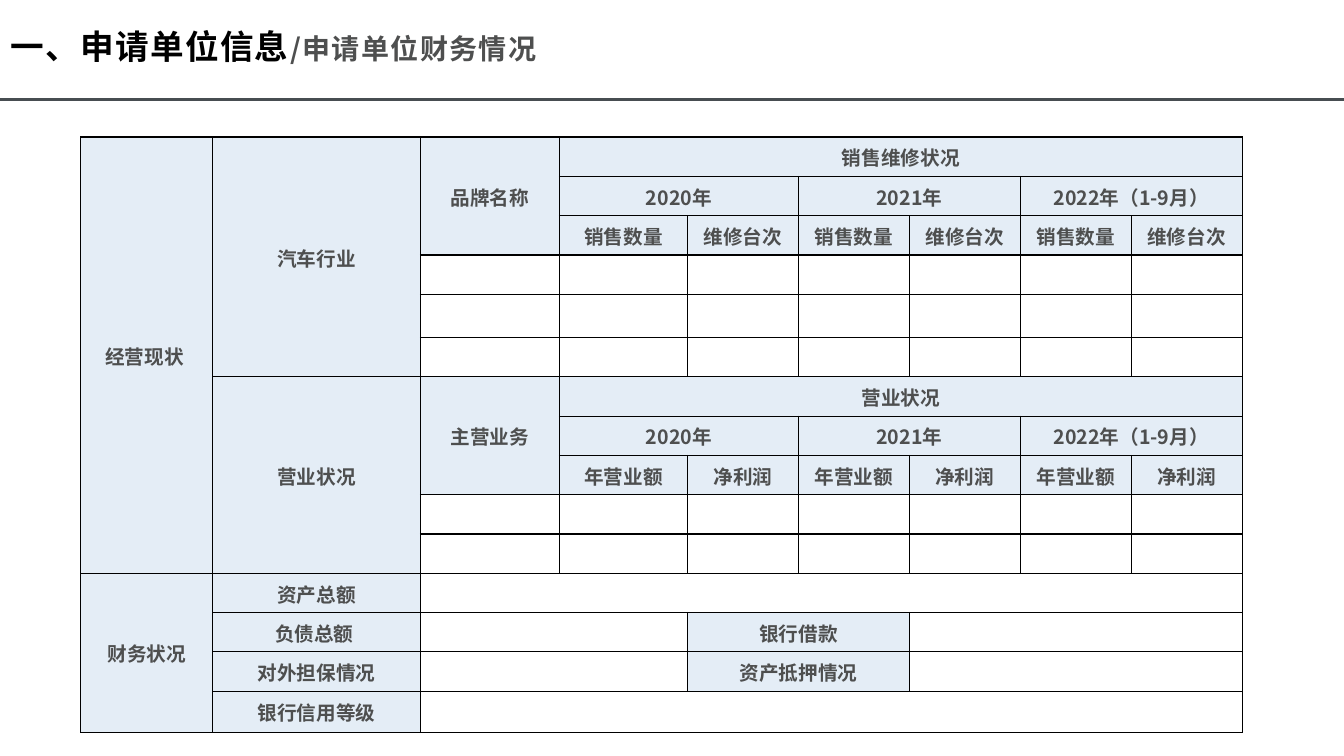
from dataclasses import dataclass

from lxml import etree
from pptx import Presentation
from pptx.dml.color import RGBColor
from pptx.enum.shapes import MSO_CONNECTOR
from pptx.enum.text import MSO_ANCHOR, MSO_AUTO_SIZE, PP_ALIGN
from pptx.oxml.ns import qn
from pptx.slide import Slide
from pptx.table import Table, _Cell
from pptx.text.text import _Paragraph
from pptx.util import Inches, Pt

STRAIGHT = MSO_CONNECTOR.STRAIGHT
MIDDLE = MSO_ANCHOR.MIDDLE
NO_AUTOFIT = MSO_AUTO_SIZE.NONE
LEFT = PP_ALIGN.LEFT
CENTER = PP_ALIGN.CENTER

WHITE = RGBColor(0xFF, 0xFF, 0xFF)
BLACK = RGBColor(0x00, 0x00, 0x00)
GREY = RGBColor(0x4E, 0x4F, 0x4F)
RULE_GREY = RGBColor(0x47, 0x4D, 0x51)
PALE_BLUE = RGBColor(0xE4, 0xED, 0xF6)

FONT = "Noto Sans CJK SC"
COLUMN_WIDTHS = [1.31, 2.06, 1.38, 1.27] + [1.1] * 5
ROW_HEIGHTS = [0.39] * 4 + [0.43] + [0.39] * 9 + [0.41]
YEARS = ["2020年", "2021年", "2022年（1-9月）"]


@dataclass(frozen=True)
class Block:
    row: int
    column: int
    text: str = ""
    rows: int = 1
    columns: int = 1


@dataclass(frozen=True)
class Section:
    row: int
    rows: int
    name: str
    item: str
    heading: str
    measures: tuple[str, str]


SECTIONS = [
    Section(0, 6, "汽车行业", "品牌名称", "销售维修状况", ("销售数量", "维修台次")),
    Section(6, 5, "营业状况", "主营业务", "营业状况", ("年营业额", "净利润")),
]

FINANCE_BLOCKS = [
    Block(0, 0, "经营现状 ", rows=11),
    Block(11, 0, "财务状况", rows=4),
    Block(11, 1, "资产总额"),
    Block(11, 2, columns=7),
    Block(12, 1, "负债总额 "),
    Block(12, 2, columns=2),
    Block(12, 4, "银行借款", columns=2),
    Block(12, 6, columns=3),
    Block(13, 1, "对外担保情况"),
    Block(13, 2, columns=2),
    Block(13, 4, "资产抵押情况", columns=2),
    Block(13, 6, columns=3),
    Block(14, 1, "银行信用等级"),
    Block(14, 2, columns=7),
]


def section_blocks(section: Section) -> list[Block]:
    top = section.row
    blocks = [
        Block(top, 1, section.name, rows=section.rows),
        Block(top, 2, section.item, rows=3),
        Block(top, 3, section.heading, columns=6),
    ]
    for index, year in enumerate(YEARS):
        column = 3 + 2 * index
        blocks.append(Block(top + 1, column, year, columns=2))
        for offset, measure in enumerate(section.measures):
            blocks.append(Block(top + 2, column + offset, measure))
    return blocks


def add_span(para: _Paragraph, text: str, size: float, color: RGBColor, spacing: int = 0) -> None:
    span = para.add_run()
    span.text = text
    span.font.size = Pt(size)
    span.font.bold = True
    span.font.name = FONT
    span.font.color.rgb = color
    properties = span.font._element
    etree.SubElement(properties, qn("a:ea")).set("typeface", FONT)
    if spacing:
        properties.set("spc", str(spacing))


def add_title(page: Slide) -> None:
    title = page.shapes.title
    title.left, title.top = Inches(0), Inches(0.21)
    title.width, title.height = Inches(9.64), Inches(0.55)
    frame = title.text_frame
    frame.auto_size = NO_AUTOFIT
    frame.vertical_anchor = MIDDLE
    para = frame.paragraphs[0]
    para.alignment = LEFT
    para.line_spacing = 0.9
    add_span(para, "一、申请单位信息", 24, BLACK, 100)
    add_span(para, "/申请单位财务情况", 20, GREY, 100)


def add_rule(page: Slide) -> None:
    rule = page.shapes.add_connector(STRAIGHT, Inches(0), Inches(0.99), Inches(13.33), Inches(0.99))
    rule.line.color.rgb = RULE_GREY
    rule.line.width = Pt(1.9)
    etree.SubElement(rule._element.spPr, qn("a:effectLst"))


def format_cell(cell: _Cell) -> None:
    properties = cell._tc.get_or_add_tcPr()
    for side in ("a:lnL", "a:lnR", "a:lnT", "a:lnB"):
        border = etree.SubElement(properties, qn(side), w=str(Pt(1)))
        fill = etree.SubElement(border, qn("a:solidFill"))
        etree.SubElement(fill, qn("a:srgbClr"), val=str(BLACK))
    cell.margin_left = cell.margin_right = cell.margin_top = Inches(0.01)
    cell.margin_bottom = Inches(0)
    cell.vertical_anchor = MIDDLE
    cell.fill.solid()
    cell.fill.fore_color.rgb = WHITE
    para = cell.text_frame.paragraphs[0]
    para.alignment = CENTER
    etree.SubElement(para._p, qn("a:endParaRPr"), sz="1400")


def fill_block(table: Table, block: Block) -> None:
    cell = table.cell(block.row, block.column)
    if block.rows > 1 or block.columns > 1:
        cell.merge(table.cell(block.row + block.rows - 1, block.column + block.columns - 1))
    if block.text:
        cell.fill.fore_color.rgb = PALE_BLUE
        add_span(cell.text_frame.paragraphs[0], block.text, 14, GREY)


def add_finance_table(page: Slide) -> None:
    frame = page.shapes.add_table(
        len(ROW_HEIGHTS), len(COLUMN_WIDTHS), Inches(0.8), Inches(1.36), Inches(11.5), Inches(5.92)
    )
    table = frame.table
    table.first_row = False
    table.horz_banding = False
    for column, width in zip(table.columns, COLUMN_WIDTHS):
        column.width = Inches(width)
    for row, height in zip(table.rows, ROW_HEIGHTS):
        row.height = Inches(height)
    for cell in table.iter_cells():
        format_cell(cell)
    for section in SECTIONS:
        for block in section_blocks(section):
            fill_block(table, block)
    for block in FINANCE_BLOCKS:
        fill_block(table, block)


def main() -> None:
    deck = Presentation()
    deck.slide_width, deck.slide_height = Inches(13.33), Inches(7.5)
    page = deck.slides.add_slide(deck.slide_layouts[5])
    page.background.fill.solid()
    page.background.fill.fore_color.rgb = WHITE
    add_rule(page)
    add_title(page)
    add_finance_table(page)
    deck.save("out.pptx")


if __name__ == "__main__":
    main()
